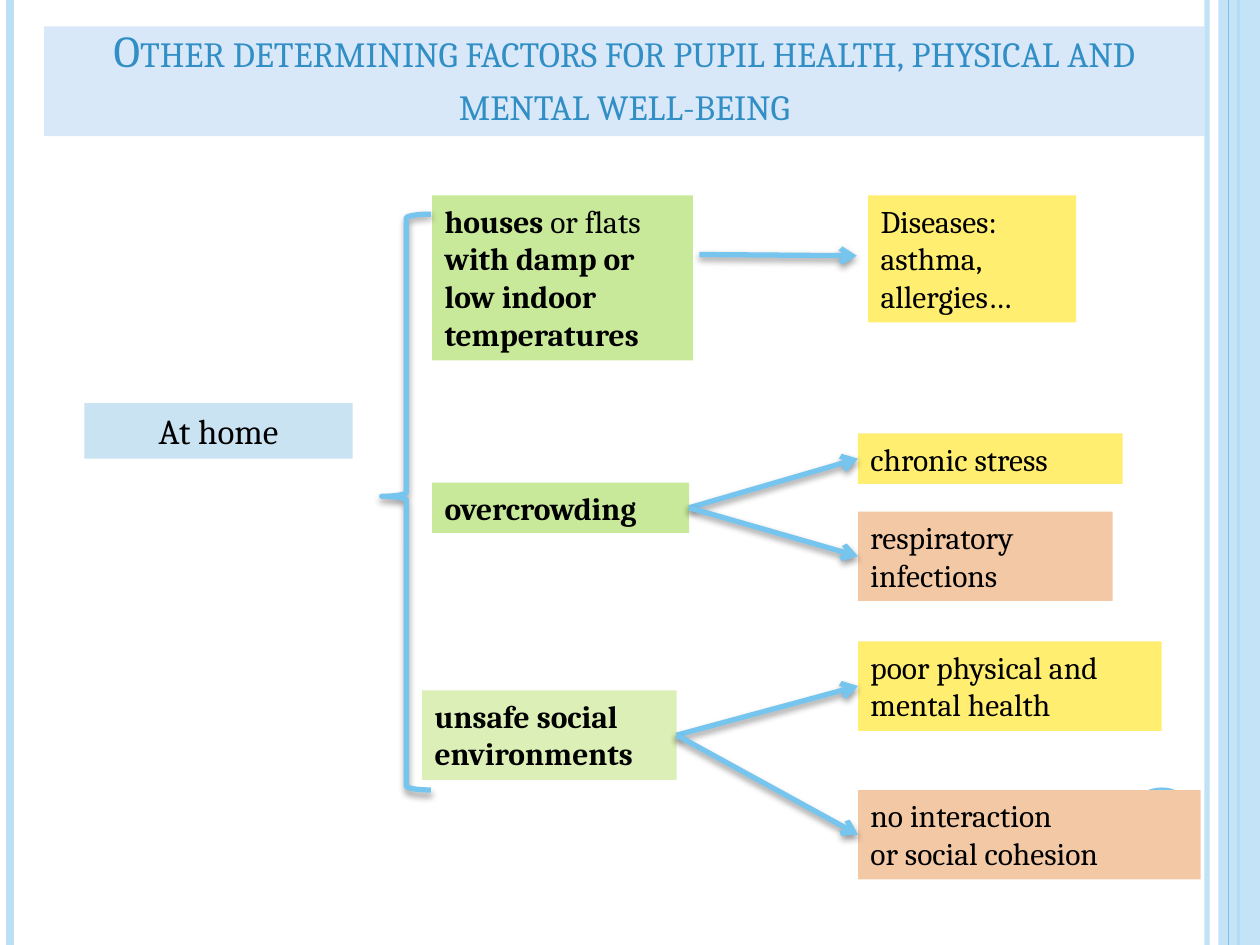
from lxml.etree import SubElement
from pptx import Presentation
from pptx.dml.color import RGBColor
from pptx.enum.shapes import MSO_CONNECTOR, MSO_SHAPE
from pptx.enum.text import MSO_ANCHOR, MSO_AUTO_SIZE, PP_ALIGN
from pptx.oxml.ns import qn
from pptx.util import Inches, Pt

STRAIGHT = MSO_CONNECTOR.STRAIGHT
RECTANGLE, OVAL, BRACE = MSO_SHAPE.RECTANGLE, MSO_SHAPE.OVAL, MSO_SHAPE.LEFT_BRACE
LEFT, CENTER = PP_ALIGN.LEFT, PP_ALIGN.CENTER
TOP, BOTTOM = MSO_ANCHOR.TOP, MSO_ANCHOR.BOTTOM
FIXED = MSO_AUTO_SIZE.NONE
LEFT_SIDE, RIGHT_SIDE = 1, 3

BLACK = RGBColor(0x00, 0x00, 0x00)
SKY = RGBColor(0x76, 0xC5, 0xEF)
PALE_SKY = RGBColor(0xBD, 0xDF, 0xF6)
TITLE_BLUE = RGBColor(0x31, 0x8F, 0xC5)
TITLE_BAND = RGBColor(0xD9, 0xE8, 0xF9)
HOME_BLUE = RGBColor(0xCA, 0xE3, 0xF2)
GREEN = RGBColor(0xC8, 0xE8, 0x9A)
PALE_GREEN = RGBColor(0xDB, 0xEF, 0xB6)
YELLOW = RGBColor(0xFF, 0xEE, 0x70)
PEACH = RGBColor(0xF3, 0xC8, 0xA5)

COLUMNS, ROWS = 100, 75


class Page:
    """Draws the elements of one slide, placed on a grid of columns and rows."""

    def __init__(self, deck):
        self.page = deck.slides.add_slide(deck.slide_layouts[5])
        self.column = deck.slide_width / COLUMNS
        self.row = deck.slide_height / ROWS
        self.font = "Cambria"

    def grid(self, *lengths):
        steps = (self.column, self.row)
        return [round(length * steps[i % 2]) for i, length in enumerate(lengths)]

    def apply(self, target, values):
        for name, value in values.items():
            setattr(target, name, value)

    def effects(self, item, shadow=False):
        effects = SubElement(item._element.spPr, qn("a:effectLst"))
        if shadow:
            outer = SubElement(effects, qn("a:outerShdw"), blurRad=str(Pt(4)),
                               dist=str(Pt(2)), dir="5400000", rotWithShape="0")
            color = SubElement(outer, qn("a:srgbClr"), val=str(BLACK))
            SubElement(color, qn("a:alpha"), val="40000")

    def opacity(self, item, percent):
        for color in item._element.spPr.iter(qn("a:srgbClr")):
            SubElement(color, qn("a:alpha"), val=str(percent * 1000))

    def stroke(self, item, color, width):
        item.line.color.rgb = color
        item.line.width = Pt(width)

    def set_text(self, box, lines, fill, size, color=BLACK, align=LEFT, anchor=TOP):
        box.fill.solid()
        box.fill.fore_color.rgb = fill
        frame = box.text_frame
        self.apply(frame, {"word_wrap": True, "auto_size": FIXED, "vertical_anchor": anchor})
        for index, line in enumerate(lines):
            para = frame.add_paragraph() if index else frame.paragraphs[0]
            para.alignment = align
            for text, bold in line:
                span = para.add_run()
                span.text = text
                self.apply(span.font, {"name": self.font, "size": Pt(size), "bold": bold})
                span.font.color.rgb = color

    def title(self, text, area):
        box = self.page.shapes.title
        self.apply(box, dict(zip(("left", "top", "width", "height"), self.grid(*area))))
        self.set_text(box, [[(text, False)]], TITLE_BAND, 25.2, TITLE_BLUE, CENTER, BOTTOM)
        for style in box._element.iter(qn("a:rPr")):
            style.set("cap", "small")

    def label(self, area, fill, lines, bold=False, size=18, align=LEFT):
        box = self.page.shapes.add_textbox(*self.grid(*area))
        spans = [[(line, bold)] if isinstance(line, str) else line for line in lines]
        self.set_text(box, spans, fill, size, align=align)
        return box

    def solid(self, kind, area, color, opacity=100):
        shape = self.page.shapes.add_shape(kind, *self.grid(*area))
        shape.shadow.inherit = False
        shape.fill.solid()
        shape.fill.fore_color.rgb = color
        shape.line.fill.background()
        self.opacity(shape, opacity)

    def rule(self, column, color, width, opacity=100):
        line = self.page.shapes.add_connector(STRAIGHT, *self.grid(column, 0, column, ROWS))
        self.stroke(line, color, width)
        self.opacity(line, opacity)
        self.effects(line)

    def brace(self, area):
        shape = self.page.shapes.add_shape(BRACE, *self.grid(*area))
        shape.adjustments[0], shape.adjustments[1] = 0.08, 0.49
        shape.fill.background()
        self.stroke(shape, SKY, 3)
        self.effects(shape, shadow=True)

    def arrow(self, ends=(0, 0, 0, 0), source=None, target=None):
        line = self.page.shapes.add_connector(STRAIGHT, *self.grid(*ends))
        if source is not None:
            line.begin_connect(source, RIGHT_SIDE)
            line.end_connect(target, LEFT_SIDE)
        self.stroke(line, SKY, 3)
        SubElement(line._element.spPr.find(qn("a:ln")), qn("a:tailEnd"), type="arrow")
        self.effects(line, shadow=True)


def main():
    deck = Presentation()
    deck.slide_width, deck.slide_height = Inches(10), Inches(7.5)
    page = Page(deck)

    page.rule(95.8, PALE_SKY, 3, 93)
    page.rule(0.8, PALE_SKY, 4.5)
    page.rule(98.3, SKY, 1.5)
    page.solid(RECTANGLE, (96.7, 0, 3.3, ROWS), PALE_SKY, 87)
    page.rule(97.5, SKY, 0.75)
    page.solid(OVAL, (89.2, 62.5, 6, 6), SKY)

    page.title("Other determining factors for pupil health, physical and mental well-being",
               (3.5, 2.1, 92.1, 8.7))
    page.label((6.7, 32, 21.3, 4.4), HOME_BLUE, ["At home"], size=20, align=CENTER)

    page.label((34.3, 15.5, 20.7, 13.1), GREEN,
               [[("houses ", True), ("or flats", False)],
                "with damp or", "low indoor", "temperatures"], bold=True)
    page.label((68.9, 15.5, 16.5, 10.1), YELLOW, ["Diseases:", "asthma, allergies…"])
    crowding = page.label((34.3, 38.3, 20.4, 4), GREEN, ["overcrowding"], bold=True)
    stress = page.label((68.1, 34.4, 21, 4), YELLOW, ["chronic stress"])
    infections = page.label((68.1, 40.6, 20.2, 7.1), PEACH, ["respiratory infections"])
    unsafe = page.label((33.5, 54.8, 20.2, 7.1), PALE_GREEN,
                        ["unsafe social", "environments"], bold=True)
    health = page.label((68.1, 50.9, 24.1, 7.1), YELLOW, ["poor physical and mental health"])
    isolation = page.label((68.1, 62.7, 27.2, 7.1), PEACH,
                           ["no interaction", "or social cohesion"])

    page.brace((30.3, 17, 3.9, 45.7))
    page.arrow((55.5, 20.2, 68, 20.3))
    for cause, outcomes in ((crowding, (stress, infections)), (unsafe, (health, isolation))):
        for outcome in outcomes:
            page.arrow(source=cause, target=outcome)

    deck.save("out.pptx")


if __name__ == "__main__":
    main()
